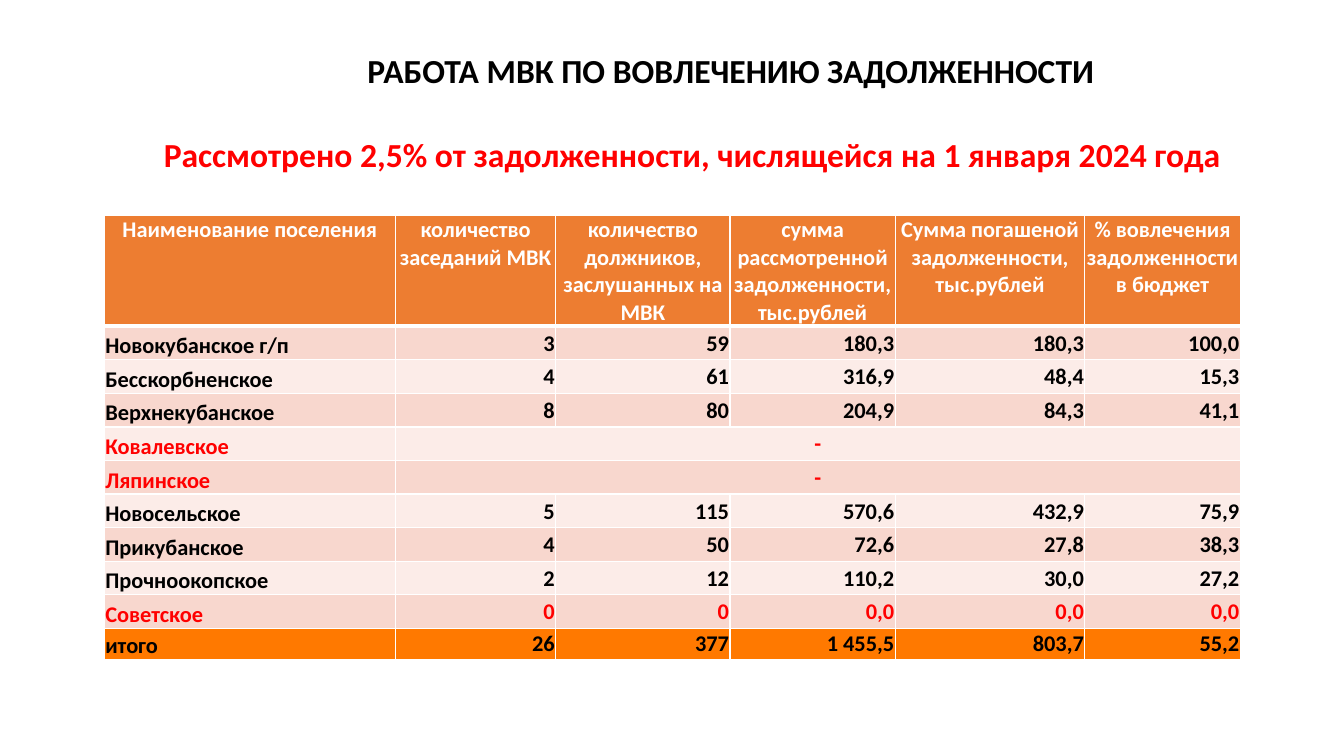
from dataclasses import dataclass

from pptx import Presentation
from pptx.dml.color import RGBColor as RGB
from pptx.enum.text import MSO_ANCHOR as ANCHOR, PP_ALIGN as ALIGN
from pptx.oxml import parse_xml
from pptx.oxml.ns import nsdecls
from pptx.util import Pt


@dataclass(frozen=True)
class Theme:
    font: str = "Calibri"
    heading_size: float = 24
    table_size: float = 16
    black: str = "000000"
    white: str = "FFFFFF"
    red: str = "FF0000"
    header: str = "ED7D31"
    bands: tuple = ("F8D7CE", "FCECE8")
    total: str = "FF7900"


HEADERS = [
    "Наименование поселения",
    "количество заседаний МВК",
    "количество должников, заслушанных на МВК",
    "сумма рассмотренной задолженности, тыс.рублей",
    "Сумма погашеной задолженности, тыс.рублей",
    "% вовлечения задолженности в бюджет",
]
SETTLEMENTS = [
    ["Новокубанское г/п", "3", "59", "180,3", "180,3", "100,0"],
    ["Бесскорбненское", "4", "61", "316,9", "48,4", "15,3"],
    ["Верхнекубанское", "8", "80", "204,9", "84,3", "41,1"],
    ["Ковалевское", "-"],
    ["Ляпинское", "-"],
    ["Новосельское", "5", "115", "570,6", "432,9", "75,9"],
    ["Прикубанское", "4", "50", "72,6", "27,8", "38,3"],
    ["Прочноокопское", "2", "12", "110,2", "30,0", "27,2"],
    ["Советское", "0", "0", "0,0", "0,0", "0,0"],
]
TOTAL = ["итого", "26", "377", "1 455,5", "803,7", "55,2"]
COL_WIDTHS = [208, 114.5, 124.5, 118, 135.5, 111]
ROW_HEIGHTS = [79] + [24] * len(SETTLEMENTS) + [22]


def set_attrs(target, values):
    for name, value in values.items():
        setattr(target, name, value)


class SlideBuilder:
    def __init__(self, slide, theme):
        self.s = slide
        self.theme = theme

    def add_text(self, tf, text, size, color, align, spacing=None):
        p = tf.paragraphs[0]
        set_attrs(p, {"alignment": align, "line_spacing": spacing})
        r = p.add_run()
        r.text = text
        set_attrs(r.font, {"name": self.theme.font, "size": Pt(size), "bold": True})
        r.font.color.rgb = RGB.from_string(color)

    def heading(self, sp, text, box, color):
        for name, value in zip(("left", "top", "width", "height"), box):
            setattr(sp, name, Pt(value))
        tf = sp.text_frame
        set_attrs(tf, {"word_wrap": True, "vertical_anchor": ANCHOR.MIDDLE})
        self.add_text(tf, text, self.theme.heading_size, color, ALIGN.CENTER, 0.9)

    def title(self, text, box, color):
        self.heading(self.s.shapes.title, text, box, color)

    def subtitle(self, text, box, color):
        sp = self.s.shapes.add_textbox(0, 0, 0, 0)
        self.heading(sp, text, box, color)

    def borders(self, cell, bottom):
        tcPr = cell._tc.get_or_add_tcPr()
        for side, width in {"L": 1, "R": 1, "T": 1, "B": bottom}.items():
            tcPr.append(parse_xml(
                f'<a:ln{side} {nsdecls("a")} w="{Pt(width)}"><a:solidFill>'
                f'<a:srgbClr val="{self.theme.white}"/></a:solidFill></a:ln{side}>'))

    def cell(self, cell, text, fill, color, align, anchor, bottom=1):
        edge = Pt(0.75)
        set_attrs(cell, {"margin_left": edge, "margin_right": edge, "margin_top": edge,
                         "margin_bottom": 0, "vertical_anchor": anchor})
        self.borders(cell, bottom)
        cell.fill.solid()
        cell.fill.fore_color.rgb = RGB.from_string(fill)
        if text:
            self.add_text(cell.text_frame, text, self.theme.table_size, color, align)

    def body_row(self, table, row, values, fill, color):
        last = len(COL_WIDTHS) - 1
        merged = len(values) == 2
        if merged:
            table.cell(row, 1).merge(table.cell(row, last))
        for col in range(last + 1):
            text = values[col] if col < len(values) else ""
            align = ALIGN.LEFT if col == 0 else ALIGN.CENTER if merged else ALIGN.RIGHT
            anchor = ANCHOR.MIDDLE if col else ANCHOR.BOTTOM
            self.cell(table.cell(row, col), text, fill, color, align, anchor)

    def debt_table(self, left, top):
        t = self.theme
        frame = self.s.shapes.add_table(
            len(ROW_HEIGHTS), len(COL_WIDTHS), Pt(left), Pt(top),
            Pt(sum(COL_WIDTHS)), Pt(sum(ROW_HEIGHTS)))
        table = frame.table
        set_attrs(table, {"first_row": False, "horz_banding": False})
        for column, width in zip(table.columns, COL_WIDTHS):
            column.width = Pt(width)
        for row, height in zip(table.rows, ROW_HEIGHTS):
            row.height = Pt(height)

        # Header row with a thick rule below
        for col, text in enumerate(HEADERS):
            self.cell(table.cell(0, col), text, t.header, t.white,
                      ALIGN.CENTER, ANCHOR.TOP, bottom=3)

        # Settlements: red where nothing was considered
        for i, values in enumerate(SETTLEMENTS):
            color = t.red if values[1] in ("-", "0") else t.black
            self.body_row(table, i + 1, values, t.bands[i % 2], color)

        # Total
        self.body_row(table, len(SETTLEMENTS) + 1, TOTAL, t.total, t.black)


def main():
    prs = Presentation()
    set_attrs(prs, {"slide_width": Pt(960), "slide_height": Pt(540)})
    theme = Theme()
    builder = SlideBuilder(prs.slides.add_slide(prs.slide_layouts[5]), theme)

    # Title
    builder.title("РАБОТА МВК ПО ВОВЛЕЧЕНИЮ ЗАДОЛЖЕННОСТИ",
                  (102, 21, 840, 61), theme.black)

    # Table
    builder.debt_table(74.5, 154)

    # Key result
    builder.subtitle("Рассмотрено 2,5% от задолженности, числящейся на 1 января 2024 года",
                     (74.5, 81.5, 840, 61), theme.red)
    prs.save("out.pptx")


if __name__ == "__main__":
    main()
